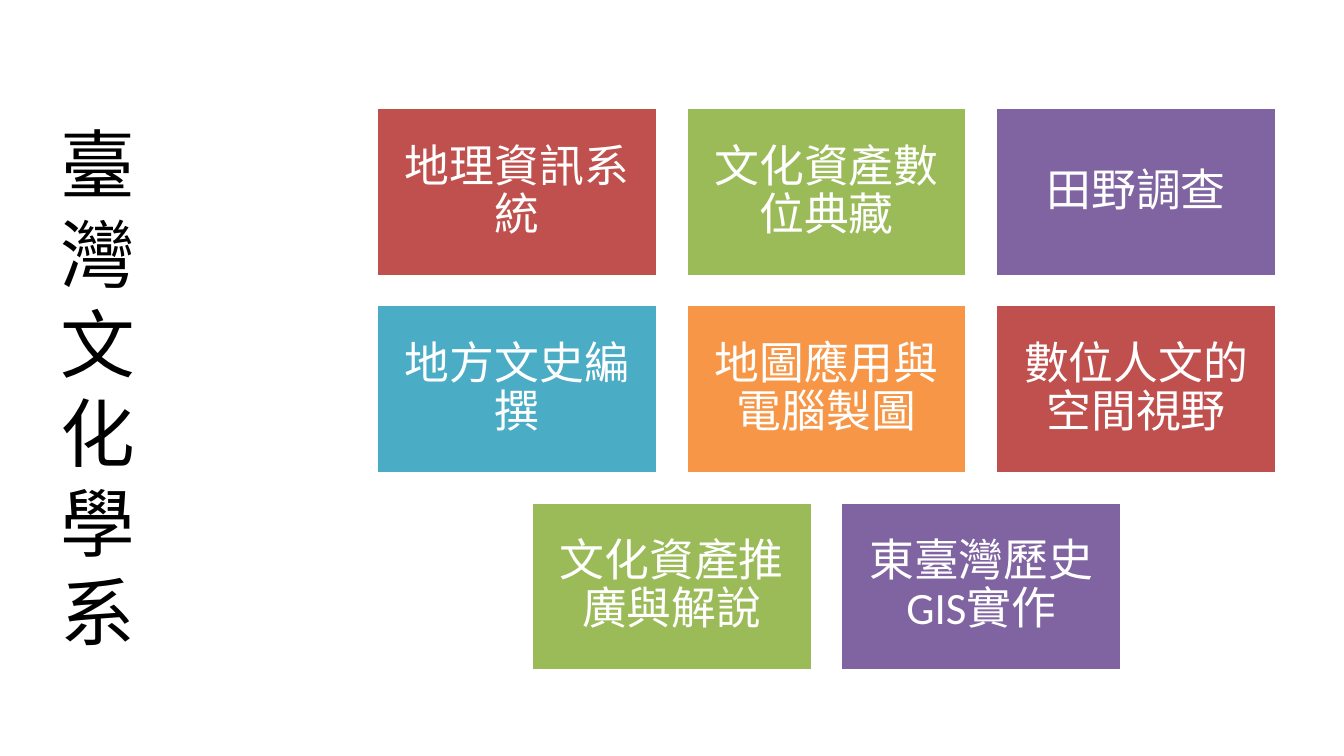
from pptx import Presentation
from pptx.dml.color import RGBColor
from pptx.enum.shapes import MSO_SHAPE
from pptx.enum.text import MSO_ANCHOR, PP_ALIGN
from pptx.util import Inches, Pt

RECTANGLE = MSO_SHAPE.RECTANGLE
MIDDLE = MSO_ANCHOR.MIDDLE
LEFT = PP_ALIGN.LEFT
CENTER = PP_ALIGN.CENTER
TITLE_ONLY = 5
WHITE = "FFFFFF"
TILE_COLORS = ["C0504D", "9BBB59", "8064A2", "4BACC6", "F79646"]
COURSES = [
    "地理資訊系統", "文化資產數位典藏", "田野調查",
    "地方文史編撰", "地圖應用與電腦製圖", "數位人文的空間視野",
    "文化資產推廣與解說", "東臺灣歷史GIS實作",
]


def color(hex_string):
    """Return the colour for a hex string."""
    return RGBColor.from_string(hex_string)


def write(frame, text, *, size, font, fill, align=CENTER, spacing=None, inset=None):
    """Put one formatted paragraph in a text frame."""
    frame.word_wrap = True
    frame.vertical_anchor = MIDDLE
    if inset is not None:
        frame.margin_left = frame.margin_right = Inches(inset)
        frame.margin_top = frame.margin_bottom = Inches(inset)
    paragraph = frame.paragraphs[0]
    paragraph.alignment = align
    if spacing is not None:
        paragraph.line_spacing = spacing
    run = paragraph.add_run()
    run.text = text
    run.font.size = Pt(size)
    run.font.name = font
    run.font.color.rgb = color(fill)


def place_title(slide, box, department):
    """Set the department name as a vertical title in the box."""
    title = slide.shapes.title
    title.left, title.top, title.width, title.height = map(Inches, box)
    write(title.text_frame, department, size=40, font="TeX Gyre Bonum",
          fill="000000", align=LEFT)
    title.text_frame._txBody.bodyPr.set("vert", "wordArtVertRtl")


def place_tile(slide, box, course, fill):
    """Draw one course tile in the box."""
    tile = slide.shapes.add_shape(RECTANGLE, *map(Inches, box))
    tile.shadow.inherit = False
    tile.fill.solid()
    tile.fill.fore_color.rgb = color(fill)
    tile.line.color.rgb = color(WHITE)
    tile.line.width = Pt(2)
    write(tile.text_frame, course, size=24, font="Calibri", fill=WHITE,
          spacing=0.9, inset=0.1)


def place_courses(slide, box, courses, columns=3, gap_share=0.1):
    """Fill the box with rows of tiles, centring a short last row."""
    left, top, width, height = box
    rows = -(-len(courses) // columns)
    tile_width = width / (columns + gap_share * (columns - 1))
    gap = tile_width * gap_share
    tile_height = (height - gap * (rows - 1)) / rows
    for index, course in enumerate(courses):
        row, column = divmod(index, columns)
        missing = columns - min(columns, len(courses) - row * columns)
        x = left + (column + missing / 2) * (tile_width + gap)
        y = top + row * (tile_height + gap)
        place_tile(slide, (x, y, tile_width, tile_height), course,
                   TILE_COLORS[index % len(TILE_COLORS)])


def main():
    """Build and save the slide."""
    deck = Presentation()
    deck.slide_width, deck.slide_height = Inches(10), Inches(10 * 9 / 16)
    slide = deck.slides.add_slide(deck.slide_layouts[TITLE_ONLY])
    place_title(slide, (0.35, 0.37, 1.02, 5.02), "臺灣文化學系")
    place_courses(slide, (2.8, 0.8, 6.7, 4.19), COURSES)
    deck.save("out.pptx")


if __name__ == "__main__":
    main()
